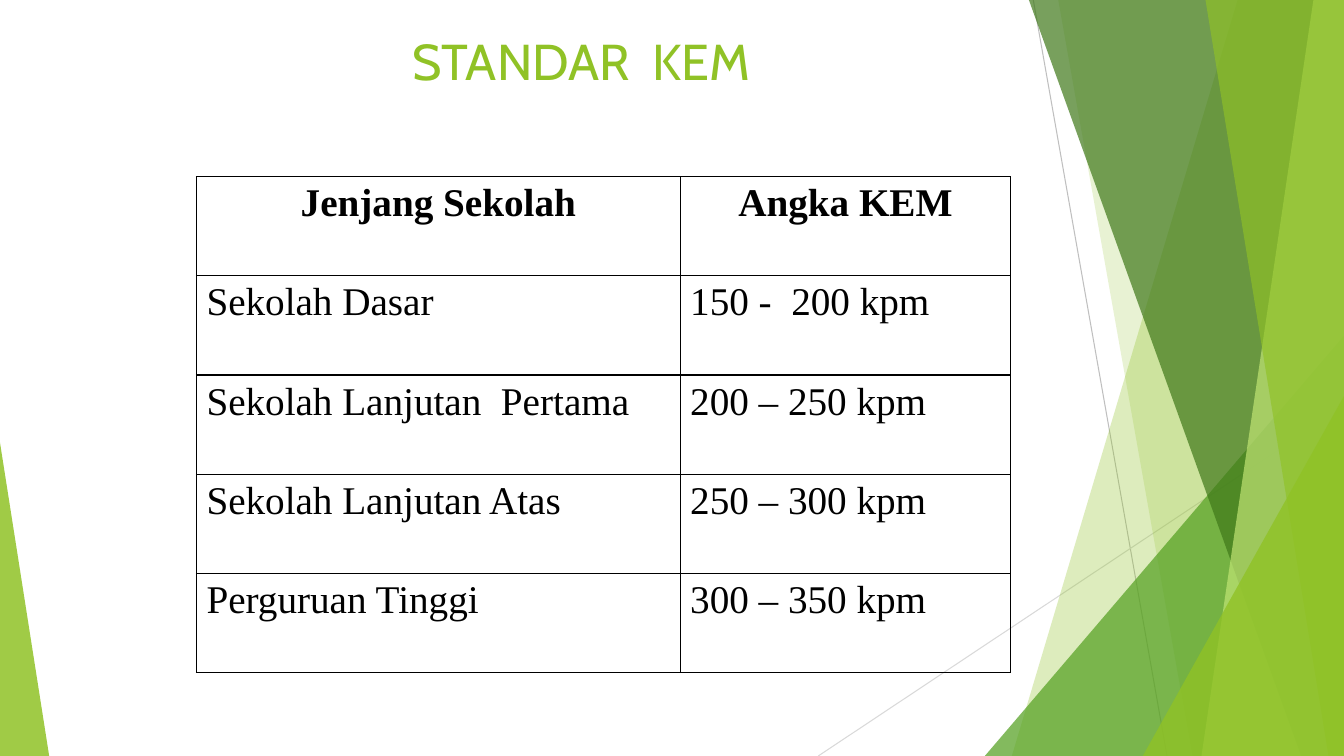
from lxml import etree
from pptx import Presentation
from pptx.dml.color import RGBColor
from pptx.enum import shapes, text
from pptx.oxml import ns
from pptx.util import Cm, Pt

LIME = RGBColor(0x90, 0xC2, 0x26)
PALE = RGBColor(0xC0, 0xE4, 0x74)
LEAF = RGBColor(0x54, 0xA0, 0x21)
PINE = RGBColor(0x3F, 0x78, 0x19)
GRAY = RGBColor(0xBF, 0xBF, 0xBF)
MIST = RGBColor(0xD9, 0xD9, 0xD9)
BLACK = RGBColor(0, 0, 0)

TITLE = "STANDAR  KEM"
ROWS = [
    ("Jenjang Sekolah", "Angka KEM"),
    ("Sekolah Dasar", "150 -  200 kpm"),
    ("Sekolah Lanjutan  Pertama", "200 – 250 kpm"),
    ("Sekolah Lanjutan Atas", "250 – 300 kpm"),
    ("Perguruan Tinggi", "300 – 350 kpm"),
]

# All lengths in centimetres
WIDE, HIGH = 33.87, 19.05
RAYS = [
    ((26.04, 0), (29.41, HIGH), GRAY),
    ((WIDE, 10.24), (20.62, HIGH), MIST),
]
# From back to front:
# band: x on the top edge, x on the bottom edge; peak: left, top, width, apex
FACETS = [
    ("band", (31.19, 25.5), LIME, 30),
    ("band", (26.67, 30.05), LIME, 20),
    ("peak", (24.82, 8.46, 9.05, 1), LEAF, 72),
    ("band", (25.93, 32.79), PINE, 70),
    ("band", (33.1, 30.28), PALE, 70),
    ("band", (30.38, 33.48), LIME, 65),
    ("peak", (28.8, 9.98, 5.07, 1), LIME, 80),
    ("peak", (0, 11.15, 1.24, 0), LIME, 85),
]
HEAD = (0.81, 0.64, 27.69, 3.18)
GRID = (4.95, 4.45)
COLS = (12.19, 8.33)
ROW = 2.5
HANG = Cm(0.97)
TITLE_FONT = {"name": "Cabin", "size": Pt(36), "bold": False}
CELL_FONT = {"name": "Times New Roman", "size": Pt(28)}


def style(font, color, form):
    for key, val in form.items():
        setattr(font, key, val)
    font.color.rgb = color


def tint(shape, color, alpha):
    """Fill without outline or shadow; alpha is opacity in percent."""
    shape.shadow.inherit = False
    shape.line.fill.background()
    shape.fill.solid()
    shape.fill.fore_color.rgb = color
    node = shape.fill._xPr.find(".//" + ns.qn("a:srgbClr"))
    etree.SubElement(node, ns.qn("a:alpha"), val=str(alpha * 1000))


def band(tree, top, base):
    """Four-sided facet reaching the right edge of the slide."""
    form = tree.build_freeform(Cm(top), 0)
    pts = [(WIDE, 0), (WIDE, HIGH), (base, HIGH)]
    form.add_line_segments([(Cm(x), Cm(y)) for x, y in pts], close=True)
    return form.convert_to_shape()


def peak(tree, left, top, width, apex):
    """Right triangle standing on the bottom edge of the slide."""
    box = [Cm(v) for v in (left, top, width, HIGH - top)]
    shape = tree.add_shape(shapes.MSO_SHAPE.ISOSCELES_TRIANGLE, *box)
    shape.adjustments[0] = apex
    return shape


def ray(tree, start, end, color):
    ends = [Cm(v) for v in start + end]
    line = tree.add_connector(shapes.MSO_CONNECTOR.STRAIGHT, *ends)
    line.line.color.rgb = color
    line.line.width = Pt(0.75)
    etree.SubElement(line._element.spPr, ns.qn("a:effectLst"))


def frame(cell):
    """Thin black border on all four sides, no fill."""
    props = cell._tc.get_or_add_tcPr()
    for side in ("lnL", "lnR", "lnT", "lnB"):
        edge = etree.SubElement(props, ns.qn("a:" + side), w=str(Pt(1)))
        fill = etree.SubElement(edge, ns.qn("a:solidFill"))
        etree.SubElement(fill, ns.qn("a:srgbClr"), val=str(BLACK))
    cell.fill.background()


def title(tree):
    box = tree.add_textbox(*[Cm(v) for v in HEAD])
    box.text_frame.word_wrap = True
    para = box.text_frame.paragraphs[0]
    para.text = TITLE
    para.alignment = text.PP_ALIGN.CENTER
    style(para.runs[0].font, LIME, TITLE_FONT)


def table(tree):
    size = (sum(COLS), ROW * len(ROWS))
    box = [Cm(v) for v in GRID + size]
    grid = tree.add_table(len(ROWS), len(COLS), *box).table
    grid.first_row = grid.horz_banding = False
    for col, width in zip(grid.columns, COLS):
        col.width = Cm(width)
    for r, words in enumerate(ROWS):
        grid.rows[r].height = Cm(ROW)
        for c, word in enumerate(words):
            cell = grid.cell(r, c)
            frame(cell)
            para = cell.text_frame.paragraphs[0]
            para.text = word
            para.alignment = text.PP_ALIGN.LEFT if r else text.PP_ALIGN.CENTER
            props = para._p.get_or_add_pPr()
            props.set("marL", str(HANG))
            props.set("indent", str(-HANG))
            style(para.runs[0].font, BLACK, {**CELL_FONT, "bold": r == 0})


def main():
    deck = Presentation()
    deck.slide_width, deck.slide_height = Cm(WIDE), Cm(HIGH)
    tree = deck.slides.add_slide(deck.slide_layouts[6]).shapes
    for start, end, color in RAYS:
        ray(tree, start, end, color)
    for kind, dims, color, alpha in FACETS:
        draw = band if kind == "band" else peak
        tint(draw(tree, *dims), color, alpha)
    title(tree)
    table(tree)
    deck.save("out.pptx")


if __name__ == "__main__":
    main()
